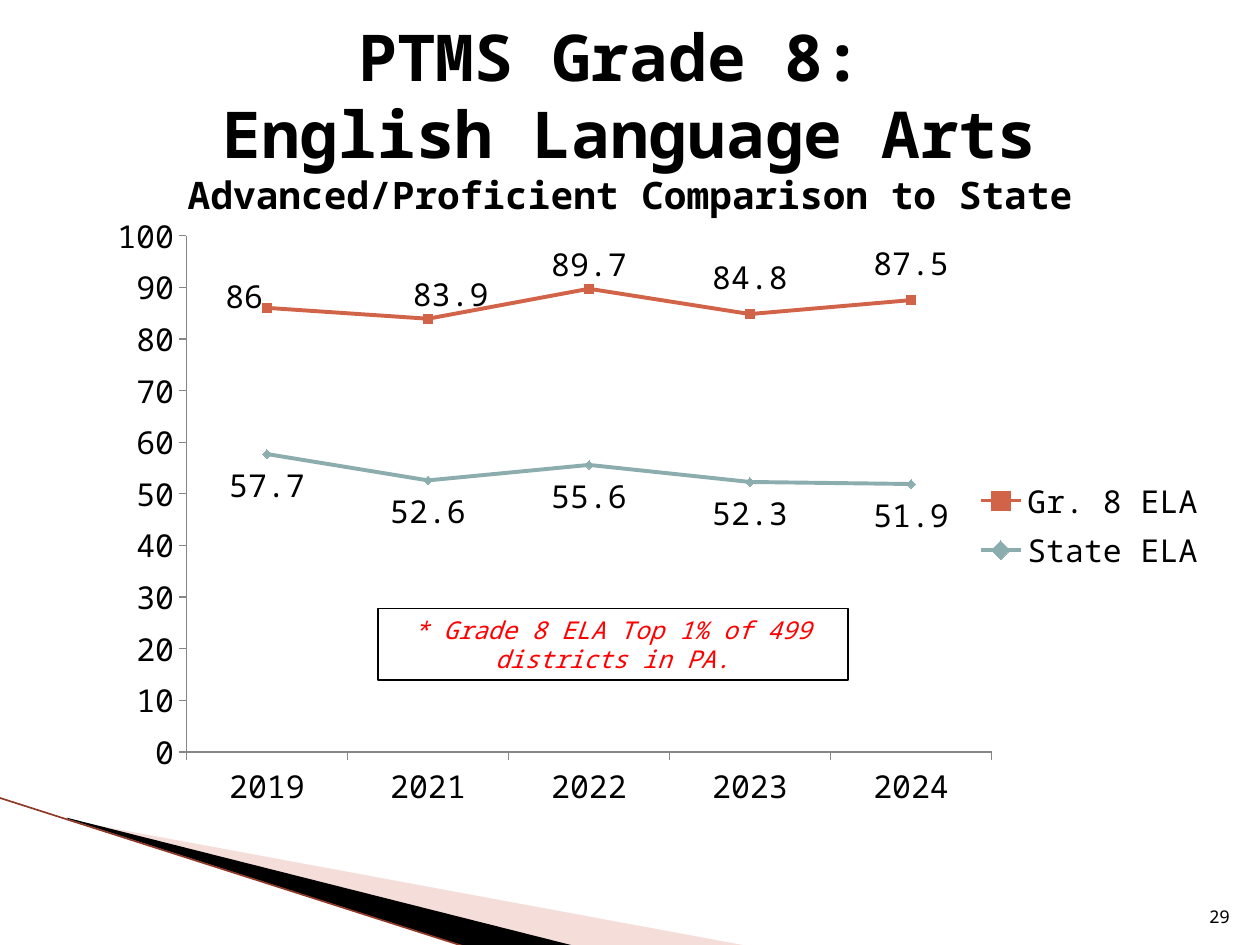
from dataclasses import dataclass

from lxml.etree import SubElement
from pptx import Presentation
from pptx.chart.data import CategoryChartData
from pptx.dml.color import RGBColor
from pptx.enum.chart import (XL_CHART_TYPE, XL_LABEL_POSITION, XL_LEGEND_POSITION,
                             XL_MARKER_STYLE, XL_TICK_MARK)
from pptx.enum.shapes import MSO_CONNECTOR, MSO_SHAPE
from pptx.enum.text import MSO_ANCHOR, PP_ALIGN
from pptx.oxml import parse_xml
from pptx.oxml.ns import nsdecls, qn
from pptx.util import Inches, Pt

FONT = "Noto Sans Mono"
BLACK = RGBColor(0x00, 0x00, 0x00)
WHITE = RGBColor(0xFF, 0xFF, 0xFF)
RED = RGBColor(0xFF, 0x00, 0x00)
PINK = RGBColor(0xE7, 0xAC, 0xA4)
BROWN = RGBColor(0x8F, 0x3A, 0x28)
GREY = RGBColor(0x86, 0x86, 0x86)
ORANGE = RGBColor(0xD1, 0x63, 0x49)
TEAL = RGBColor(0x8C, 0xAD, 0xAE)


@dataclass
class Wedge:
    points: list[tuple[float, float]]
    color: RGBColor
    opacity: int = 100


@dataclass
class ScoreLine:
    name: str
    scores: list[float]
    color: RGBColor
    marker: XL_MARKER_STYLE
    label_position: XL_LABEL_POSITION
    label_shifts: tuple[tuple[float, float], ...] = ()


YEARS = ["2019", "2021", "2022", "2023", "2024"]
WEDGES = [
    Wedge([(0.55, 6.51), (5.95, 7.51), (4.56, 7.51), (0.55, 6.5)], PINK, 40),
    Wedge([(0.53, 6.49), (4.57, 7.51), (3.72, 7.52), (0.54, 6.5)], BLACK),
]
SCORE_LINES = [
    ScoreLine("Gr. 8 ELA", [86, 83.9, 89.7, 84.8, 87.5], ORANGE,
              XL_MARKER_STYLE.SQUARE, XL_LABEL_POSITION.ABOVE,
              ((-0.02, 0.03), (0.02, 0.01), (0, 0.01), (0, -0.01), (0, -0.01))),
    ScoreLine("State ELA", [57.7, 52.6, 55.6, 52.3, 51.9], TEAL,
              XL_MARKER_STYLE.DIAMOND, XL_LABEL_POSITION.BELOW),
]


def style_font(font, *, size: float, color: RGBColor = BLACK,
               bold: bool = False, italic: bool = False) -> None:
    font.name = FONT
    font.size = Pt(size)
    font.color.rgb = color
    font.bold = bold
    font.italic = italic


def write_text(box, parts: list[tuple[str, float]], *, align: PP_ALIGN,
               anchor: MSO_ANCHOR, **style) -> None:
    frame = box.text_frame
    frame.word_wrap = True
    frame.vertical_anchor = anchor
    para = frame.paragraphs[0]
    para.alignment = align
    for text, size in parts:
        for index, line in enumerate(text.split("\n")):
            if index:
                para.add_line_break()
            if line:
                span = para.add_run()
                span.text = line
                style_font(span.font, size=size, **style)


def draw_wedge(page, wedge: Wedge) -> None:
    points = [(Inches(x), Inches(y)) for x, y in wedge.points]
    builder = page.shapes.build_freeform(*points[0])
    builder.add_line_segments(points[1:], close=True)
    shape = builder.convert_to_shape()
    shape.shadow.inherit = False
    shape.line.fill.background()
    shape.fill.solid()
    shape.fill.fore_color.rgb = wedge.color
    if wedge.opacity < 100:
        color = shape.fill._xPr.find(f".//{qn('a:srgbClr')}")
        SubElement(color, qn("a:alpha"), val=str(wedge.opacity * 1000))


def draw_edge(page) -> None:
    edge = page.shapes.add_connector(MSO_CONNECTOR.STRAIGHT, Inches(-0.01), Inches(6.33),
                                     Inches(3.71), Inches(7.52))
    edge.line.color.rgb = BROWN
    edge.line.width = Pt(0.95)
    SubElement(edge._element.spPr, qn("a:effectLst"))


def manual_layout(**values: object):
    items = "".join(f'<c:{key} val="{value}"/>' for key, value in values.items())
    return parse_xml(f'<c:layout {nsdecls("c")}><c:manualLayout>{items}'
                     "</c:manualLayout></c:layout>")


def format_axis(axis) -> None:
    axis.has_major_gridlines = False
    axis.major_tick_mark = XL_TICK_MARK.OUTSIDE
    axis.minor_tick_mark = XL_TICK_MARK.NONE
    axis.format.line.color.rgb = GREY
    axis.format.line.width = Pt(0.75)


def format_series(series, score_line: ScoreLine) -> None:
    series.smooth = False
    series.format.line.color.rgb = score_line.color
    series.format.line.width = Pt(2.25)
    marker = series.marker
    marker.style = score_line.marker
    marker.size = 5
    marker.format.fill.solid()
    marker.format.fill.fore_color.rgb = score_line.color
    marker.format.line.color.rgb = score_line.color
    labels = series.data_labels
    labels.show_value = True
    labels.position = score_line.label_position
    style_font(labels.font, size=18)
    for index, (x, y) in enumerate(score_line.label_shifts):
        label = series.points[index].data_label
        style_font(label.font, size=18)
        label.position = score_line.label_position
        element = labels._element.findall(qn("c:dLbl"))[index]
        element.find(qn("c:idx")).addnext(manual_layout(x=x, y=y))


def draw_chart(page) -> None:
    data = CategoryChartData()
    data.categories = YEARS
    for score_line in SCORE_LINES:
        data.add_series(score_line.name, score_line.scores)
    chart = page.shapes.add_chart(XL_CHART_TYPE.LINE_MARKERS, Inches(0.67), Inches(1.67),
                                  Inches(9), Inches(5), data).chart
    style_font(chart.font, size=18)
    chart.has_title = False
    chart.has_legend = True
    chart.legend.position = XL_LEGEND_POSITION.RIGHT
    chart.legend.include_in_layout = False
    style_font(chart.legend.font, size=18)
    for axis in (chart.category_axis, chart.value_axis):
        format_axis(axis)
    chart.value_axis.minimum_scale = 0
    chart.value_axis.maximum_scale = 100
    chart.value_axis.major_unit = 10
    plot = chart.plots[0]
    plot.vary_by_categories = False
    for series, score_line in zip(plot.series, SCORE_LINES):
        format_series(series, score_line)
    area = chart._chartSpace.chart.plotArea
    for layout in area.findall(qn("c:layout")):
        area.remove(layout)
    area.insert(0, manual_layout(layoutTarget="inner", xMode="edge", yMode="edge",
                                 x=0.09, y=0.04, w=0.71, h=0.82))


def main() -> None:
    deck = Presentation()
    deck.slide_width, deck.slide_height = Inches(10), Inches(7.5)
    page = deck.slides.add_slide(deck.slide_layouts[6])
    for wedge in WEDGES:
        draw_wedge(page, wedge)
    draw_edge(page)
    title = page.shapes.add_textbox(Inches(0.5), Inches(0.3), Inches(9), Inches(1.25))
    write_text(title, [("PTMS Grade 8: \nEnglish Language Arts\n", 36.9),
                       ("Advanced/Proficient Comparison to State", 21.6)],
               align=PP_ALIGN.CENTER, anchor=MSO_ANCHOR.MIDDLE, bold=True)
    draw_chart(page)
    number = page.shapes.add_textbox(Inches(9.46), Inches(7.01), Inches(0.4), Inches(0.4))
    write_text(number, [("29", 10)], align=PP_ALIGN.RIGHT, anchor=MSO_ANCHOR.BOTTOM)
    note = page.shapes.add_shape(MSO_SHAPE.RECTANGLE, Inches(3), Inches(4.83),
                                 Inches(3.73), Inches(0.57))
    note.shadow.inherit = False
    note.fill.background()
    note.line.color.rgb = BLACK
    note.line.width = Pt(1)
    write_text(note, [("* Grade 8 ELA Top 1% of 499 districts in PA.", 14)],
               align=PP_ALIGN.CENTER, anchor=MSO_ANCHOR.TOP, color=RED, italic=True)
    deck.save("out.pptx")


if __name__ == "__main__":
    main()
